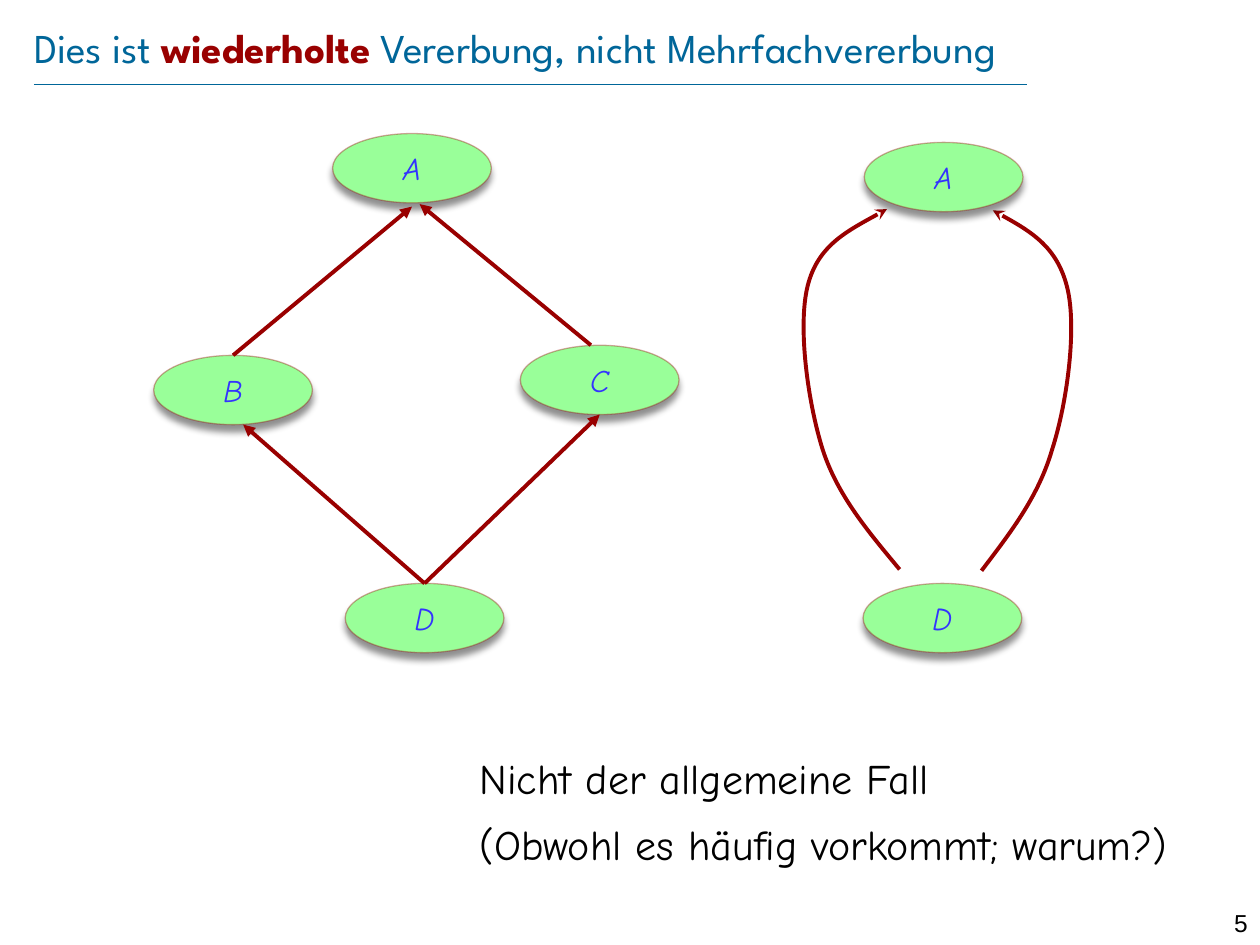
from lxml import etree
from pptx import Presentation
from pptx.dml.color import RGBColor
from pptx.enum.shapes import MSO_CONNECTOR, MSO_SHAPE
from pptx.enum.text import MSO_ANCHOR, PP_ALIGN
from pptx.oxml import parse_xml
from pptx.oxml.ns import nsdecls, qn
from pptx.util import Inches, Pt

LINE = MSO_CONNECTOR.STRAIGHT
OVAL = MSO_SHAPE.OVAL
MIDDLE = MSO_ANCHOR.MIDDLE
LEFT, CENTER, RIGHT = PP_ALIGN.LEFT, PP_ALIGN.CENTER, PP_ALIGN.RIGHT

BLUE = RGBColor(0x00, 0x66, 0x99)
RED = RGBColor(0x99, 0x00, 0x00)
GREEN = RGBColor(0x99, 0xFF, 0x99)
INK = RGBColor(0x33, 0x33, 0xFF)
BLACK = RGBColor(0x00, 0x00, 0x00)
HEAD, BODY, PLAIN = "League Spartan", "Comic Neue", "Arial"
WIDE, HIGH = 1.26, 0.55
SHADOW = (
    f'<a:effectLst {nsdecls("a")}><a:outerShdw blurRad="50800" dist="50800" '
    'dir="5400000" rotWithShape="0"><a:srgbClr val="000000">'
    '<a:alpha val="43000"/></a:srgbClr></a:outerShdw></a:effectLst>'
)


def add_run(para, text, font, size, color, bold=False, italic=False):
    run = para.add_run()
    run.text = text
    run.font.name = font
    run.font.size = Pt(size)
    run.font.color.rgb = color
    run.font.bold = bold
    run.font.italic = italic


def add_text(slide, box, runs, font, size, align=LEFT, inset=None):
    frame = slide.shapes.add_textbox(*map(Inches, box)).text_frame
    frame.word_wrap = True
    if inset is not None:
        frame.margin_left = frame.margin_right = Inches(inset)
        frame.margin_top = frame.margin_bottom = Inches(inset)
        frame.vertical_anchor = MIDDLE
    para = frame.paragraphs[0]
    para.alignment = align
    for text, color, bold in runs:
        add_run(para, text, font, size, color, bold)


def add_line(slide, start, end, color, width):
    line = slide.shapes.add_connector(LINE, *map(Inches, start + end))
    line.line.color.rgb = color
    line.line.width = Pt(width)
    etree.SubElement(line._element.spPr, qn("a:effectLst"))
    return line


def add_tip(shape, kind):
    tip = etree.SubElement(shape.line._get_or_add_ln(), qn("a:tailEnd"))
    tip.set("type", kind)


def add_node(slide, text, left, top):
    node = slide.shapes.add_shape(OVAL, *map(Inches, (left, top, WIDE, HIGH)))
    node.fill.solid()
    node.fill.fore_color.rgb = GREEN
    node.line.color.rgb = RED
    node.line.width = Pt(0.75)
    tint = node.line._get_or_add_ln().find(".//" + qn("a:srgbClr"))
    etree.SubElement(tint, qn("a:alpha")).set("val", "34000")
    node._element.spPr.append(parse_xml(SHADOW))
    frame = node.text_frame
    frame.word_wrap = False
    frame.vertical_anchor = MIDDLE
    para = frame.paragraphs[0]
    para.alignment = CENTER
    add_run(para, text, BODY, 18, INK, italic=True)
    return node


def add_arrow(slide, start, end, node=None):
    arrow = add_line(slide, start, end, RED, 2.25)
    if node is not None:
        arrow.begin_connect(node, 0)
    add_tip(arrow, "triangle")


def add_curve(slide, points):
    spots = [(Inches(x), Inches(y)) for x, y in points]
    pen = slide.shapes.build_freeform(*spots[0])
    pen.add_line_segments(spots[1:], close=False)
    curve = pen.convert_to_shape()
    curve.shadow.inherit = False
    curve.fill.background()
    curve.line.color.rgb = RED
    curve.line.width = Pt(2.25)
    add_tip(curve, "stealth")
    steps = list(curve._element.iter(qn("a:lnTo")))
    route = steps[0].getparent()
    for first in range(0, len(steps), 3):
        bend = etree.SubElement(route, qn("a:cubicBezTo"))
        for step in steps[first:first + 3]:
            bend.append(step[0])
            route.remove(step)


def add_header(slide, left, top, width, height):
    runs = [
        ("Dies ist ", BLUE, False),
        ("wiederholte", RED, True),
        (" Vererbung, nicht Mehrfachvererbung", BLUE, False),
    ]
    add_text(slide, (left, top, width, height), runs, HEAD, 23.4, inset=0)
    rule = top + height + 0.06
    add_line(slide, (left, rule), (left + 7.88, rule), BLUE, 0.25)


def add_diamond(slide, left, top):
    def spot(x, y):
        return left + x, top + y

    add_node(slide, "A", *spot(1.42, 0))
    low = add_node(slide, "D", *spot(1.52, 3.57))
    side = add_node(slide, "B", *spot(0, 1.76))
    add_node(slide, "C", *spot(2.91, 1.68))
    add_arrow(slide, spot(0.63, 1.76), spot(2.05, 0.58), side)
    add_arrow(slide, spot(3.47, 1.68), spot(2.11, 0.56))
    add_arrow(slide, spot(2.15, 3.57), spot(3.54, 2.23), low)
    add_arrow(slide, spot(2.15, 3.57), spot(0.71, 2.31), low)


def add_loop(slide, left, top):
    west = [(0.81, 3.39), (0.57, 3.1), (0.32, 2.81), (0.2, 2.44), (0.08, 2.06),
            (0, 1.46), (0.08, 1.14), (0.16, 0.82), (0.44, 0.68), (0.71, 0.53)]
    east = [(1.46, 3.4), (1.68, 3.11), (1.91, 2.82), (2.02, 2.44), (2.14, 2.07),
            (2.22, 1.47), (2.14, 1.15), (2.06, 0.83), (1.81, 0.68), (1.55, 0.54)]
    for points in (west, east):
        add_curve(slide, [(left + x, top + y) for x, y in points])
    add_node(slide, "A", left + 0.53, top)
    add_node(slide, "D", left + 0.52, top + 3.5)


def add_notes(slide, left, top, width, height):
    lines = ["Nicht der allgemeine Fall", "(Obwohl es häufig vorkommt; warum?)"]
    for row, text in enumerate(lines):
        box = (left, top + row * 0.53, width, height)
        add_text(slide, box, [(text, BLACK, False)], BODY, 24)


def main():
    deck = Presentation()
    deck.slide_width, deck.slide_height = Inches(10), Inches(7.5)
    slide = deck.slides.add_slide(deck.slide_layouts[6])
    add_header(slide, 0.27, 0.13, 9.38, 0.48)
    add_diamond(slide, 1.22, 1.06)
    add_loop(slide, 6.33, 1.13)
    add_notes(slide, 3.71, 5.92, 6.1, 0.5)
    add_text(slide, (9.45, 7.16, 0.55, 0.24), [("5", BLACK, False)], PLAIN, 14, RIGHT)
    deck.save("out.pptx")


if __name__ == "__main__":
    main()
